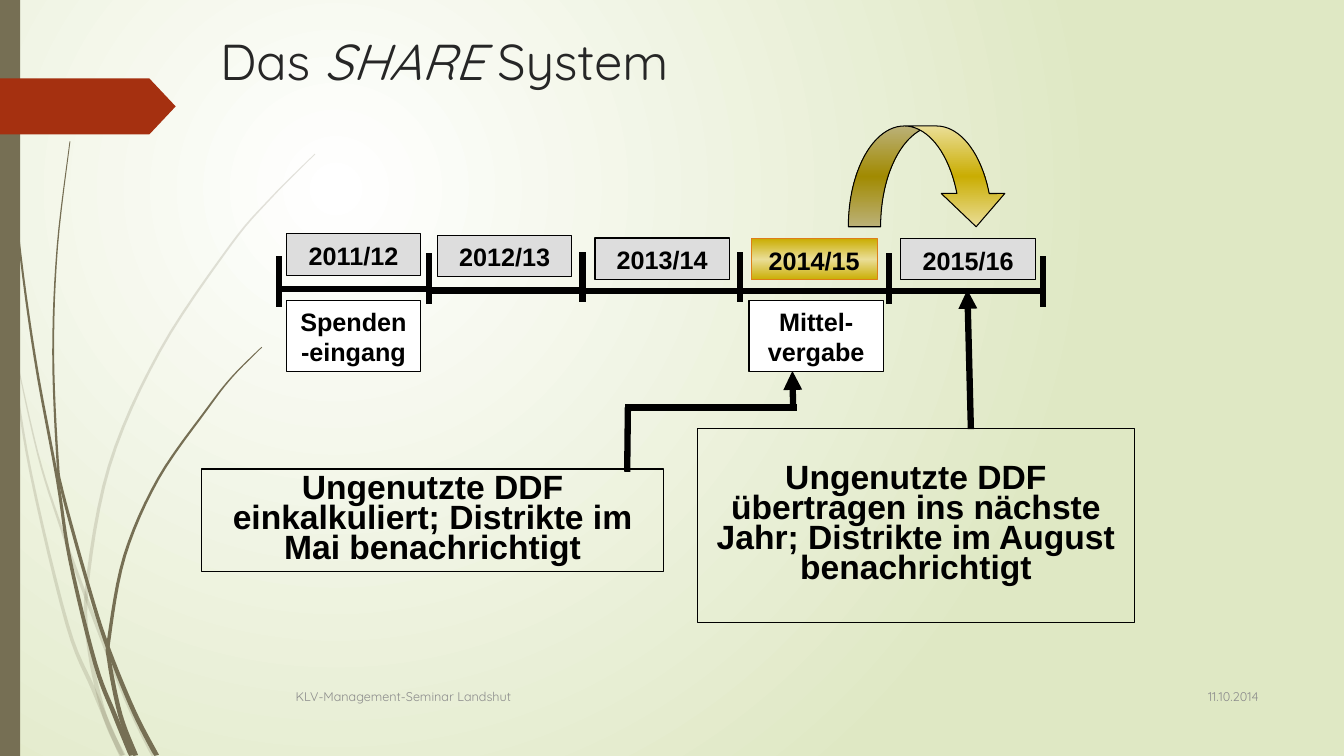
from dataclasses import dataclass
from math import hypot

from pptx import Presentation
from pptx import util as u
from pptx.dml.color import RGBColor
from pptx.enum import shapes, text
from pptx.oxml import parse_xml
from pptx.oxml.ns import nsdecls, qn


@dataclass(frozen=True)
class Theme:
    heading_font: str = "Quicksand"
    body_font: str = "Arial"
    title_size: int = 36
    note_size: int = 24
    label_size: int = 18
    footer_size: int = 9
    title: str = "262626"
    ink: str = "000000"
    muted: str = "8C8C8C"
    stalk: str = "766F54"
    flag: str = "A53010"
    year: str = "DDDDDD"
    paper: str = "FFFFFF"
    meadow: str = "DFE8C4"
    gold: str = "CAAD02"
    pale_gold: str = "EADE97"
    gold_edge: str = "DE7E18"
    thin: float = 0.75
    thick: float = 4.5


THEME = Theme()
ALIGN = text.PP_ALIGN
ANCHOR = text.MSO_ANCHOR
PRESET = shapes.MSO_SHAPE

# Year labels: text, left, top, width
YEARS = [
    ("2011/12", 204.5, 167, 96),
    ("2012/13", 312.5, 168, 96),
    ("2013/14", 425, 170, 96),
    ("2014/15", 536.5, 170.5, 90),
    ("2015/16", 643.5, 170.5, 96),
]
# Timeline ticks: x, top
TICKS = [(199.5, 183), (306.5, 181), (416, 180), (528.5, 180), (635, 181), (745, 183)]
AXIS_Y = [206.5, 207.5, 208, 208, 208]
TICK_HEIGHT = 36

# Grass blades from tip to root
PALE_BLADES = [
    [(0, 205), (8, 252), (22, 338), (48, 446), (67, 493), (87, 540)],
    [(10, 248), (27, 324), (43, 375), (62, 428), (90, 499), (110, 540)],
    [(225, 110), (193, 142), (164, 176), (114, 251), (78, 333), (62, 420),
     (64, 465), (75, 512), (88, 540)],
]
DARK_BLADES = [
    [(2, 0), (5, 79), (13, 168), (25, 256), (41, 343), (50, 400), (68, 474),
     (82, 511), (94, 540)],
    [(50, 101), (41, 176), (38, 251), (41, 326), (45, 353), (65, 425), (78, 465),
     (96, 509), (112, 540)],
    [(187, 248), (166, 269), (148, 292), (113, 342), (89, 397), (78, 455),
     (78, 472), (86, 511), (97, 540)],
]


def points(*lengths):
    return [u.Pt(length) for length in lengths]


def set_gradient(owner, fill, colours, direction):
    """Spread colours evenly along the given direction element."""
    fill.gradient()
    gradient = owner.find(".//" + qn("a:gradFill"))
    for child in list(gradient):
        gradient.remove(child)
    stops = "".join(
        f'<a:gs pos="{100000 * i // (len(colours) - 1)}"><a:srgbClr val="{colour}"/></a:gs>'
        for i, colour in enumerate(colours))
    for xml in (f"<a:gsLst {nsdecls('a')}>{stops}</a:gsLst>", direction):
        gradient.append(parse_xml(xml))


def paint(shape, fill=None, line=None):
    """Fill may be one colour, a list of gradient colours or None."""
    shape.shadow.inherit = False
    if fill is None:
        shape.fill.background()
    elif isinstance(fill, list):
        set_gradient(shape.element, shape.fill, fill,
                     f'<a:lin {nsdecls("a")} ang="5400000" scaled="0"/>')
    else:
        shape.fill.solid()
        shape.fill.fore_color.rgb = RGBColor.from_string(fill)
    if line is None:
        shape.line.fill.background()
    else:
        shape.line.color.rgb = RGBColor.from_string(line)
        shape.line.width = u.Pt(THEME.thin)


def write(shape, words, font, size, colour, align, anchor, bold=False, spacing=None):
    frame = shape.text_frame
    frame.text = words
    frame.word_wrap = True
    frame.vertical_anchor = anchor
    paragraph = frame.paragraphs[0]
    paragraph.alignment = align
    paragraph.line_spacing = spacing
    style_run(paragraph.runs[0], font, size, colour, bold)


def style_run(run, font, size, colour, bold=False):
    run.font.name = font
    run.font.size = u.Pt(size)
    run.font.color.rgb = RGBColor.from_string(colour)
    run.font.bold = bold


def add_preset(slide, preset, box, fill=None, line=None):
    shape = slide.shapes.add_shape(preset, *points(*box))
    paint(shape, fill, line)
    return shape


def add_label(slide, words, box, fill, line=THEME.ink):
    label = add_preset(slide, PRESET.RECTANGLE, box, fill, line)
    write(label, words, THEME.body_font, THEME.label_size, THEME.ink,
          ALIGN.CENTER, ANCHOR.BOTTOM, bold=True)


def add_note(slide, words, box):
    note = add_preset(slide, PRESET.RECTANGLE, box, line=THEME.ink)
    write(note, words, THEME.body_font, THEME.note_size, THEME.ink,
          ALIGN.CENTER, ANCHOR.MIDDLE, bold=True, spacing=0.75)


def add_line(slide, start, end, arrow=False):
    line = slide.shapes.add_connector(shapes.MSO_CONNECTOR.STRAIGHT, *points(*start, *end))
    line.line.color.rgb = RGBColor.from_string(THEME.ink)
    line.line.width = u.Pt(THEME.thick)
    if arrow:
        line.element.find(".//" + qn("a:ln")).append(
            parse_xml(f'<a:tailEnd {nsdecls("a")} type="triangle"/>'))
    line.element.spPr.append(parse_xml(f'<a:effectLst {nsdecls("a")}/>'))


def add_footer(slide, words, box, align):
    footer = slide.shapes.add_textbox(*points(*box))
    write(footer, words, THEME.heading_font, THEME.footer_size, THEME.muted,
          align, ANCHOR.MIDDLE)


def smooth_curve(knots, steps=6):
    """Sample a Catmull-Rom spline through the knots."""
    padded = [knots[0], *knots, knots[-1]]
    curve = []
    for a, b, c, d in zip(padded, padded[1:], padded[2:], padded[3:]):
        for step in range(steps):
            t = step / steps
            curve.append(tuple(
                b[k] + 0.5 * t * (c[k] - a[k]
                                  + t * (2 * a[k] - 5 * b[k] + 4 * c[k] - d[k]
                                         + t * (3 * (b[k] - c[k]) + d[k] - a[k])))
                for k in (0, 1)))
    return curve + [knots[-1]]


def add_blade(slide, knots, opacity=100):
    """Draw a curved blade that widens from tip to root."""
    spine = smooth_curve(knots)
    last = len(spine) - 1
    left, right = [], []
    for i, (x, y) in enumerate(spine):
        (x0, y0), (x1, y1) = spine[max(i - 1, 0)], spine[min(i + 1, last)]
        half = (0.3 + 1.5 * i / last) / hypot(x1 - x0, y1 - y0)
        dx, dy = half * (y1 - y0), half * (x0 - x1)
        left.append(points(max(x - dx, 0), min(y - dy, 540)))
        right.append(points(x + dx, min(y + dy, 540)))
    outline = left + right[::-1]
    builder = slide.shapes.build_freeform(*outline[0], scale=1.0)
    builder.add_line_segments(outline[1:], close=True)
    blade = builder.convert_to_shape()
    paint(blade, THEME.stalk)
    blade.element.find(".//" + qn("a:srgbClr")).append(
        parse_xml(f'<a:alpha {nsdecls("a")} val="{opacity * 1000}"/>'))


def add_backdrop(slide):
    set_gradient(slide.element, slide.background.fill, [THEME.paper, THEME.meadow],
                 f'<a:path {nsdecls("a")} path="circle"><a:fillToRect '
                 'l="50000" t="50000" r="100000" b="100000"/></a:path>')
    for knots in PALE_BLADES:
        add_blade(slide, knots, opacity=20)
    for knots in DARK_BLADES:
        add_blade(slide, knots)
    add_preset(slide, PRESET.RECTANGLE, (0, 0, 14.5, 540), THEME.stalk)
    flag = add_preset(slide, PRESET.PENTAGON, (0, 56, 125.5, 40), THEME.flag)
    flag.adjustments[0] = 0.47


def add_title(slide):
    title = slide.shapes.title
    title.left, title.top, title.width, title.height = points(150, 18, 690, 93.5)
    write(title, "Das ", THEME.heading_font, THEME.title_size, THEME.title,
          ALIGN.LEFT, ANCHOR.TOP)
    for words, italic in (("SHARE ", True), ("System", False)):
        run = title.text_frame.paragraphs[0].add_run()
        run.text = words
        style_run(run, THEME.heading_font, THEME.title_size, THEME.title)
        run.font.italic = italic


def add_timeline(slide):
    for (x, _), (next_x, _), y in zip(TICKS, TICKS[1:], AXIS_Y):
        add_line(slide, (x, y), (next_x, y))
    for x, top in TICKS:
        add_line(slide, (x, top), (x, top + TICK_HEIGHT))
    for year, left, top, width in YEARS:
        current = year == "2014/15"
        fill = [THEME.gold, THEME.pale_gold, THEME.gold] if current else THEME.year
        add_label(slide, year, (left, top, width, 29.5), fill,
                  THEME.gold_edge if current else THEME.ink)
    carry_over = add_preset(slide, PRESET.CURVED_DOWN_ARROW, (606, 90, 114, 72),
                            [THEME.pale_gold, THEME.gold, THEME.pale_gold], THEME.ink)
    for i, ratio in enumerate((0.32, 0.63, 0.33)):
        carry_over.adjustments[i] = ratio


def main():
    deck = Presentation()
    deck.slide_width, deck.slide_height = points(960, 540)
    slide = deck.slides.add_slide(deck.slide_layouts[5])
    add_backdrop(slide)
    add_title(slide)
    add_timeline(slide)

    # Explanations and the arrows leading up from them
    add_note(slide, "Ungenutzte DDF übertragen ins nächste Jahr; "
             "Distrikte im August benachrichtigt", (498, 306, 312.5, 138.5))
    add_line(slide, (693.5, 306.5), (691, 207), arrow=True)
    add_note(slide, "Ungenutzte DDF einkalkuliert; Distrikte im Mai benachrichtigt",
             (144, 335, 330, 73.5))
    add_line(slide, (448.5, 291), (448, 337))
    add_line(slide, (446.5, 291), (569.5, 291))
    add_line(slide, (566.5, 289), (566, 265), arrow=True)

    # Events below the timeline
    for event, left in (("Spenden-eingang", 204.5), ("Mittel-vergabe", 535)):
        add_label(slide, event, (left, 214.5, 96, 51), THEME.paper)

    # Footer
    add_footer(slide, "11.10.2014", (816, 482.5, 90, 29.5), ALIGN.RIGHT)
    add_footer(slide, "KLV-Management-Seminar Landshut", (204, 483, 600, 29), ALIGN.LEFT)
    deck.save("out.pptx")


if __name__ == "__main__":
    main()
